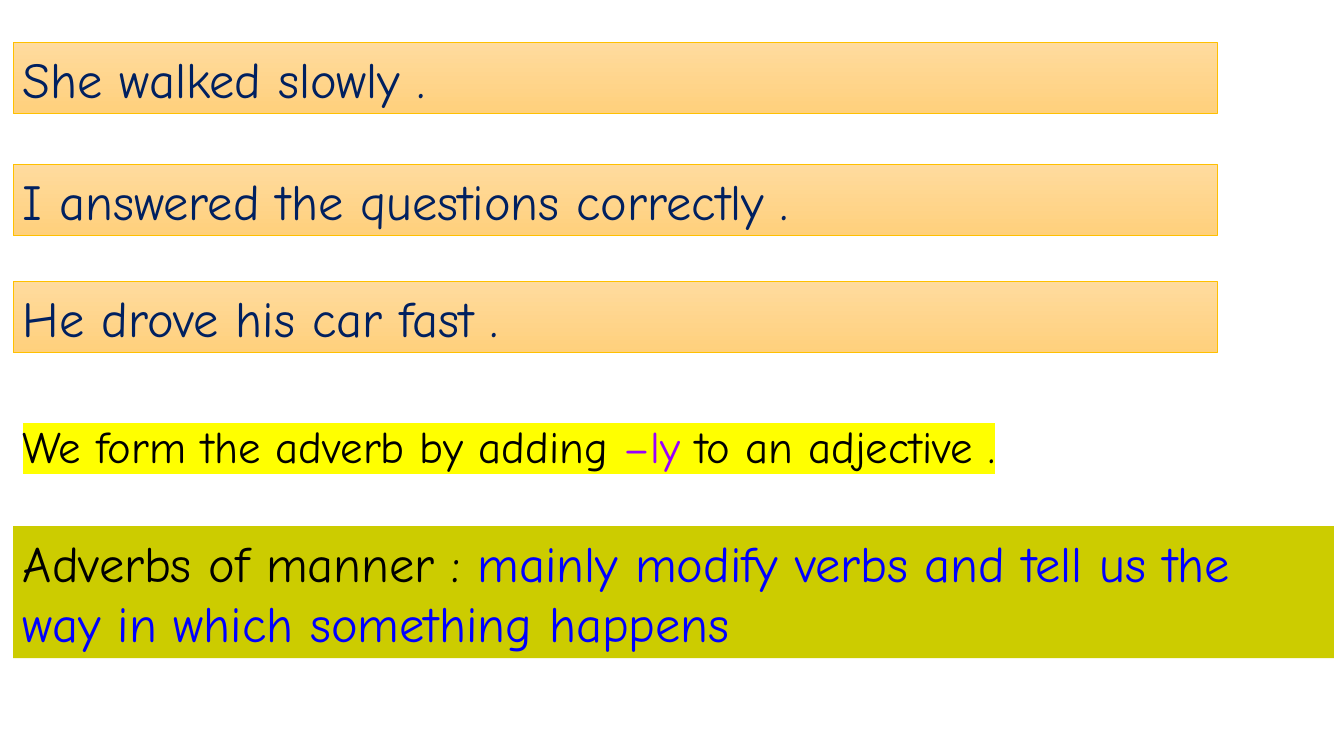
from lxml.etree import SubElement
from pptx import Presentation
from pptx.dml.color import RGBColor
from pptx.enum.shapes import MSO_SHAPE
from pptx.oxml.ns import qn
from pptx.util import Inches, Pt

FONT = "Comic Neue"
COLORS = {
    "navy": "002060", "black": "000000", "blue": "0000FF", "purple": "9900FF",
    "olive": "CCCC00", "yellow": "FFFF00", "border": "FFC000",
    "band top": "FFDB9E", "band bottom": "FFD07C",
}

# Content: top of each example sentence, then the coloured pieces of each rule
EXAMPLES = [
    (0.42, "She walked slowly ."),
    (1.63, "I answered the questions correctly ."),
    (2.79, "He drove his car fast ."),
]
FORMING_RULE = [
    ("We form the adverb by adding ", "black"),
    ("–ly", "purple"),
    (" to an adjective .", "black"),
]
DEFINITION = [
    ("Adverbs of manner : ", "black"),
    ("mainly modify verbs and tell us the way in which something happens", "blue"),
]
LEFT = 0.13


def color(name):
    return RGBColor.from_string(COLORS[name])


def add_highlight(span, name):
    highlight = SubElement(span.font._element, qn("a:highlight"))
    SubElement(highlight, qn("a:srgbClr")).set("val", COLORS[name])
    span.font.fill._xPr.find(qn("a:solidFill")).addnext(highlight)


def write(box, pieces, size, highlight=None):
    box.text_frame.word_wrap = True
    para = box.text_frame.paragraphs[0]
    para.font.name = FONT
    para.font.size = Pt(size)
    for text, name in pieces:
        span = para.add_run()
        span.text = text
        span.font.color.rgb = color(name)
        if highlight:
            add_highlight(span, highlight)


def add_band(page, top, width, height, pieces):
    band = page.shapes.add_shape(
        MSO_SHAPE.RECTANGLE, Inches(LEFT), Inches(top), Inches(width), Inches(height))
    band.shadow.inherit = False
    write(band, pieces, 36)
    band.text_frame.paragraphs[0].alignment = 1
    return band


def main():
    deck = Presentation()
    deck.slide_width, deck.slide_height = Inches(13.33), Inches(7.5)
    page = deck.slides.add_slide(deck.slide_layouts[6])

    # Definition band
    definition = add_band(page, 5.22, 13.1, 1.31, DEFINITION)
    definition.fill.solid()
    definition.fill.fore_color.rgb = color("olive")
    definition.line.fill.background()

    # Example sentences
    for top, sentence in EXAMPLES:
        band = add_band(page, top, 11.94, 0.71, [(sentence, "navy")])
        band.fill.gradient()
        band.fill.gradient_angle = 270
        for stop, name in zip(band.fill.gradient_stops, ("band top", "band bottom")):
            stop.color.rgb = color(name)
        band.line.color.rgb = color("border")
        band.line.width = Pt(0.5)

    # Highlighted forming rule
    rule = page.shapes.add_textbox(
        Inches(LEFT), Inches(4.1), Inches(11.43), Inches(0.64))
    write(rule, FORMING_RULE, 32, "yellow")

    deck.save("out.pptx")


if __name__ == "__main__":
    main()
